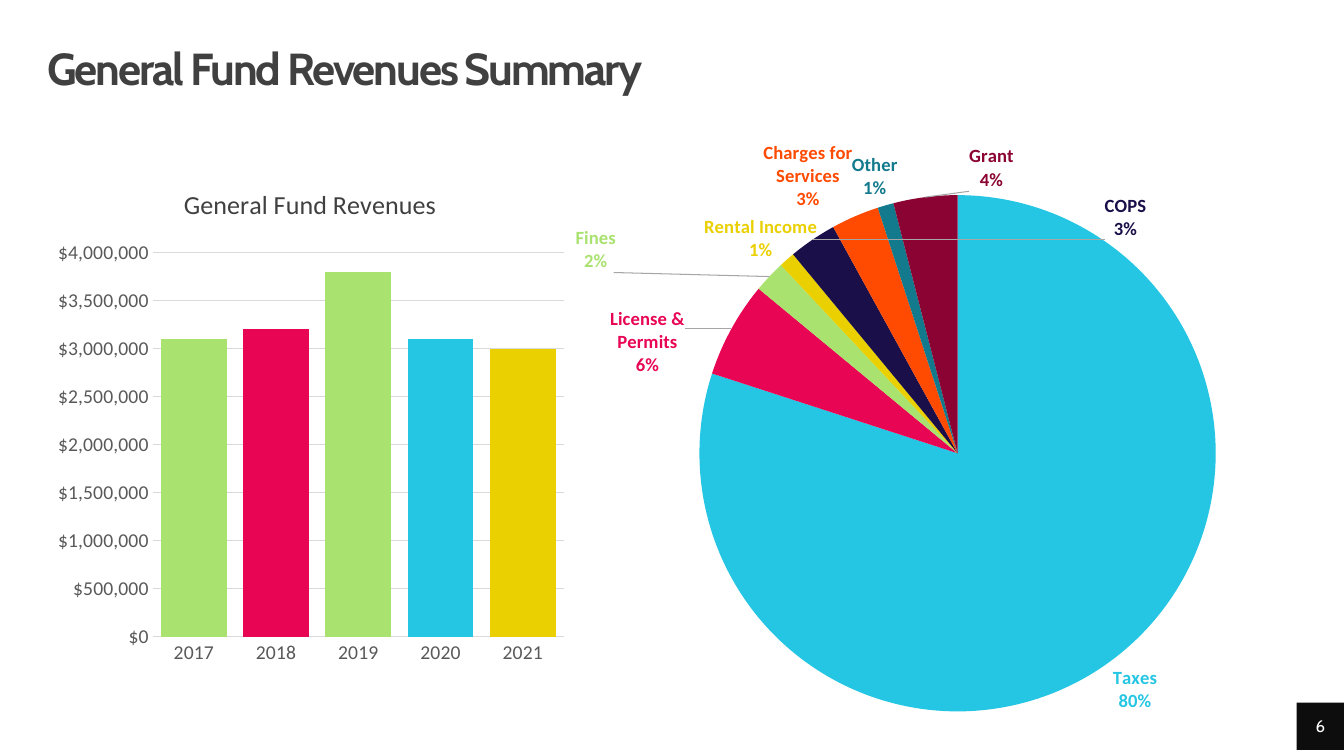
import dataclasses

import pptx
import pptx.chart.data
import pptx.dml.color
import pptx.enum.chart
import pptx.enum.shapes
import pptx.enum.text
import pptx.oxml
import pptx.oxml.ns
import pptx.util

Pt = pptx.util.Pt


@dataclasses.dataclass(frozen=True)
class Theme:
    """Colours, fonts and type sizes of the slide."""
    heading_font: str = "Cabin"
    body_font: str = "Calibri"
    heading_size: float = 32
    chart_title_size: float = 18.6
    axis_size: float = 14
    label_size: float = 13.3
    number_size: float = 12
    base_size: float = 10
    dark: str = "404040"
    axis: str = "595959"
    grid: str = "D9D9D9"
    leader: str = "A6A6A6"
    black: str = "0D0D0D"
    white: str = "FFFFFF"
    green: str = "A9E26F"
    pink: str = "E80554"
    blue: str = "25C6E3"
    yellow: str = "EAD000"
    navy: str = "1A0F49"
    orange: str = "FF4A01"
    teal: str = "127A8C"
    maroon: str = "8B0332"


THEME = Theme()
MARGIN = 33.84
REVENUES = [
    ("2017", 3100000, THEME.green),
    ("2018", 3200000, THEME.pink),
    ("2019", 3800000, THEME.green),
    ("2020", 3100000, THEME.blue),
    ("2021", 3000000, THEME.yellow),
]
SOURCES = [
    ("Taxes", 80, THEME.blue, None),
    ("License & Permits", 6, THEME.pink, (-0.06, 0.08)),
    ("Fines", 2, THEME.green, (-0.22, 0)),
    ("Rental Income", 1, THEME.yellow, (0.05, 0.01)),
    ("COPS", 3, THEME.navy, (0.49, 0.01)),
    ("Charges for Services", 3, THEME.orange, None),
    ("Other", 1, THEME.teal, (0.02, 0)),
    ("Grant", 4, THEME.maroon, (0.13, 0)),
]


def rgb(value):
    """Turn a hex string into a colour."""
    return pptx.dml.color.RGBColor.from_string(value)


def apply_format(target, values):
    """Set each named attribute on the target."""
    for name, value in values.items():
        setattr(target, name, value)


def format_font(font, size, colour, name=THEME.body_font, bold=False):
    """Give a font its face, size, weight and colour."""
    apply_format(font, {"name": name, "size": Pt(size), "bold": bold})
    font.color.rgb = rgb(colour)


def fill_solid(target, colour):
    """Fill a shape or chart format with one colour."""
    target.fill.solid()
    target.fill.fore_color.rgb = rgb(colour)


def chart_xml(tag, content="", **attributes):
    """Build a chart element from its tag, content and attributes."""
    text = "".join(f' {key}="{value}"' for key, value in attributes.items())
    namespaces = pptx.oxml.ns.nsdecls("c", "a")
    return pptx.oxml.parse_xml(f"<c:{tag} {namespaces}{text}>{content}</c:{tag}>")


def set_layout(parent, index, places):
    """Place a chart part by the given manual layout values."""
    for previous in parent.xpath("./c:layout"):
        parent.remove(previous)
    content = "".join(f'<c:{key} val="{value}"/>' for key, value in places.items())
    parent.insert(index, chart_xml("layout", f"<c:manualLayout>{content}</c:manualLayout>"))


def add_text(shape, text, alignment, **font_values):
    """Write one line without insets, centred in height, and return its paragraph."""
    frame = shape.text_frame
    apply_format(frame, {
        "word_wrap": True,
        "vertical_anchor": pptx.enum.text.MSO_ANCHOR.MIDDLE,
        "margin_left": 0, "margin_top": 0, "margin_right": 0, "margin_bottom": 0,
    })
    paragraph = frame.paragraphs[0]
    paragraph.alignment = alignment
    run = paragraph.add_run()
    run.text = text
    format_font(run.font, name=THEME.heading_font, **font_values)
    return paragraph


def add_heading(slide, box):
    """Add the slide heading in the box."""
    shape = slide.shapes.add_textbox(*map(Pt, box))
    paragraph = add_text(shape, "General Fund Revenues Summary", pptx.enum.text.PP_ALIGN.LEFT,
                         size=THEME.heading_size, colour=THEME.dark, bold=True)
    paragraph.line_spacing = 0.9
    shape.element.xpath(".//a:rPr")[0].set("spc", "-150")


def add_series_chart(slide, box, chart_type, rows, plot_places):
    """Add a chart with one series and one colour for each point."""
    chart_data = pptx.chart.data.CategoryChartData(number_format="[$$-409]#,##0")
    chart_data.categories = [row[0] for row in rows]
    chart_data.add_series("Series 1", [row[1] for row in rows])
    chart = slide.shapes.add_chart(chart_type, *map(Pt, box), chart_data).chart
    apply_format(chart, {"has_legend": False, "has_title": False})
    format_font(chart.font, THEME.base_size, "000000")
    for index, row in enumerate(rows):
        fill_solid(chart.plots[0].series[0].points[index].format, row[2])
    set_layout(chart.element.xpath(".//c:plotArea")[0], 0,
               {"layoutTarget": "inner", "xMode": "edge", "yMode": "edge", **plot_places})
    return chart


def add_revenue_columns(slide, box):
    """Add the column chart of yearly revenues in the box."""
    chart = add_series_chart(slide, box, pptx.enum.chart.XL_CHART_TYPE.COLUMN_CLUSTERED,
                             REVENUES, {"x": 0.2, "y": 0.17, "w": 0.78, "h": 0.756})
    apply_format(chart.plots[0], {"gap_width": 25, "vary_by_categories": False})
    chart.has_title = True
    run = chart.chart_title.text_frame.paragraphs[0].add_run()
    run.text = "General Fund Revenues"
    format_font(run.font, THEME.chart_title_size, THEME.dark)
    chart.chart_title.include_in_layout = False
    set_layout(chart.element.xpath(".//c:title")[0], 1,
               {"xMode": "edge", "yMode": "edge", "x": 0.25, "y": 0.03})
    for axis in (chart.category_axis, chart.value_axis):
        axis.major_tick_mark = pptx.enum.chart.XL_TICK_MARK.NONE
        format_font(axis.tick_labels.font, THEME.axis_size, THEME.axis)
    value_axis = chart.value_axis
    apply_format(value_axis, {"minimum_scale": 0, "maximum_scale": 4000000, "major_unit": 500000})
    apply_format(value_axis.tick_labels, {"number_format": "[$$-409]#,##0",
                                          "number_format_is_linked": False})
    value_axis.format.line.fill.background()
    for line in (chart.category_axis.format.line, value_axis.major_gridlines.format.line):
        line.width = Pt(0.75)
        line.color.rgb = rgb(THEME.grid)


def add_source_pie(slide, box):
    """Add the pie chart of revenue sources in the box."""
    chart = add_series_chart(slide, box, pptx.enum.chart.XL_CHART_TYPE.PIE, SOURCES,
                             {"x": 0.18, "y": 0.12, "w": 0.75, "h": 0.82})
    series = chart.plots[0].series[0]
    outside = pptx.enum.chart.XL_LABEL_POSITION.OUTSIDE_END
    apply_format(series.data_labels, {"show_percentage": True, "show_category_name": True,
                                      "show_value": False, "position": outside})
    for index, (_, _, colour, offset) in enumerate(SOURCES):
        label = series.points[index].data_label
        format_font(label.font, THEME.label_size, colour, bold=True)
        label.position = outside
        element = chart.element.xpath(f".//c:dLbl[c:idx/@val='{index}']")[0]
        for tag, value in {"showVal": 0, "showCatName": 1, "showPercent": 1}.items():
            element.xpath(f"./c:{tag}")[0].set("val", str(value))
        element.append(chart_xml("separator", "\n"))
        if offset:
            set_layout(element, 1, dict(zip("xy", offset)))
    labels = chart.element.xpath(".//c:ser/c:dLbls")[0]
    for previous in labels.xpath("./c:showLeaderLines"):
        labels.remove(previous)
    labels.append(chart_xml("separator", "\n"))
    labels.append(chart_xml("showLeaderLines", val=1))
    labels.append(chart_xml("leaderLines", '<c:spPr><a:ln w="9525"><a:solidFill><a:srgbClr '
                            f'val="{THEME.leader}"/></a:solidFill></a:ln></c:spPr>'))


def add_slide_number(slide, box):
    """Add the dark corner square with the slide number."""
    square = slide.shapes.add_shape(pptx.enum.shapes.MSO_SHAPE.RECTANGLE, *map(Pt, box))
    square.shadow.inherit = False
    fill_solid(square, THEME.black)
    square.line.fill.background()
    add_text(square, "6", pptx.enum.text.PP_ALIGN.CENTER,
             size=THEME.number_size, colour=THEME.white)


def main():
    """Build the slide and save it."""
    presentation = pptx.Presentation()
    width, height = 960, 540
    apply_format(presentation, {"slide_width": Pt(width), "slide_height": Pt(height)})
    slide = presentation.slides.add_slide(presentation.slide_layouts[6])
    add_heading(slide, (MARGIN, MARGIN, width - 2 * MARGIN, MARGIN))
    add_revenue_columns(slide, (MARGIN, 118.8, 376.56, 362.88))
    add_source_pie(slide, (411.12, 84.96, 491.76, 450.72))
    add_slide_number(slide, (width - MARGIN, 501.84, MARGIN, MARGIN))
    presentation.save("out.pptx")


if __name__ == "__main__":
    main()
